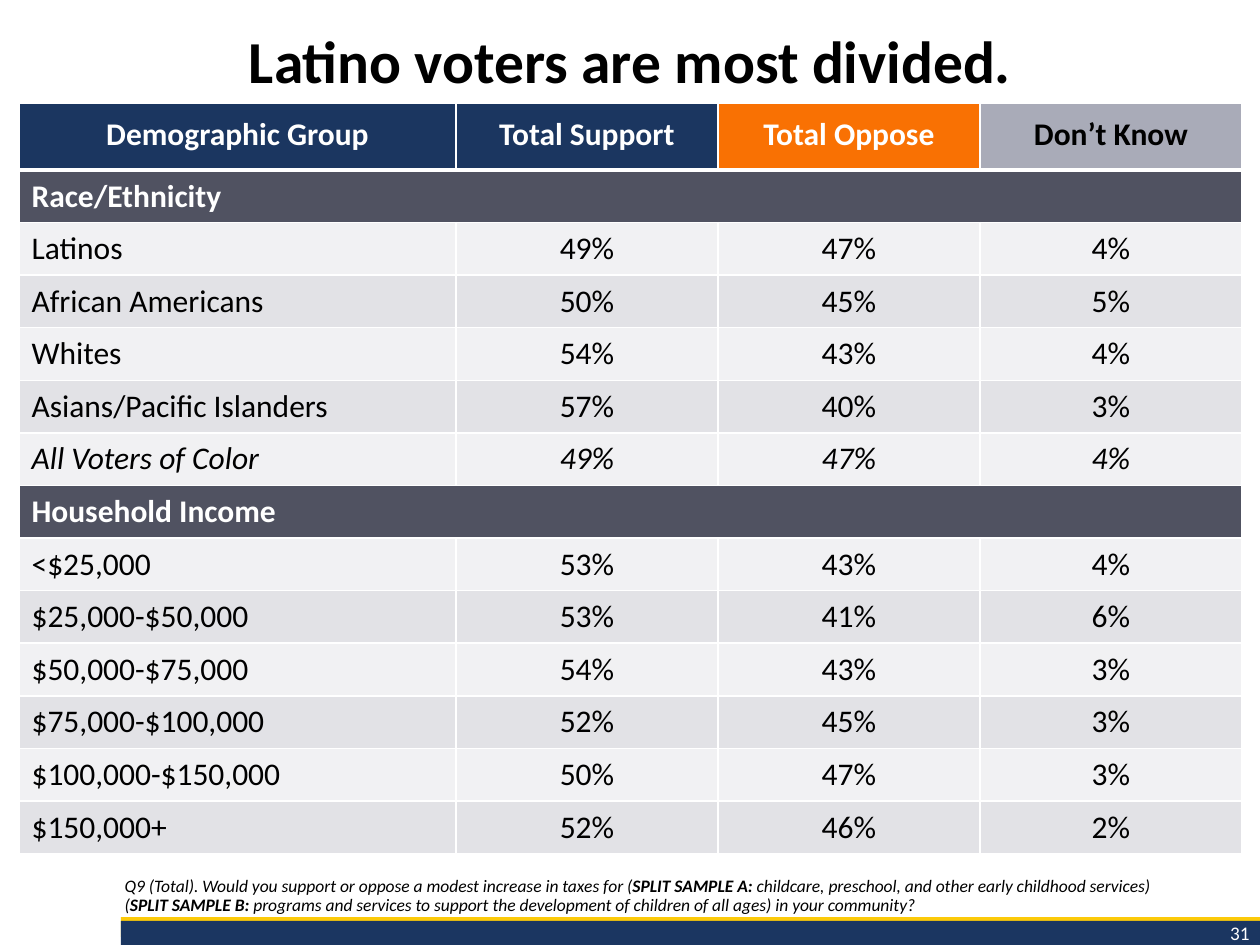
from lxml.etree import SubElement
from pptx import Presentation
from pptx.dml.color import RGBColor
from pptx.enum.shapes import MSO_SHAPE
from pptx.enum.text import MSO_ANCHOR, MSO_AUTO_SIZE, PP_ALIGN
from pptx.oxml.ns import qn
from pptx.util import Emu, Pt

BLACK = RGBColor(0x00, 0x00, 0x00)
WHITE = RGBColor(0xFF, 0xFF, 0xFF)
NAVY = RGBColor(0x1B, 0x36, 0x60)
ORANGE = RGBColor(0xF9, 0x71, 0x03)
GRAY = RGBColor(0xA9, 0xAB, 0xB8)
SLATE = RGBColor(0x50, 0x52, 0x61)
BANDS = [RGBColor(0xF1, 0xF1, 0xF3), RGBColor(0xE2, 0xE2, 0xE6)]
GOLD = RGBColor(0xFC, 0xCA, 0x09)
FOOTER_NAVY = RGBColor(0x1B, 0x36, 0x61)

PX = 914400 / 126  # EMU per pixel


def px(*lengths):
    return [Emu(round(length * PX)) for length in lengths]


def set_borders(cell, widths):
    """Draw white cell borders; a width of 0 hides that side."""
    properties = cell._tc.get_or_add_tcPr()
    for side in "LRTB":
        line = SubElement(properties, qn(f"a:ln{side}"), w=str(Pt(widths[side])))
        if widths[side]:
            fill = SubElement(line, qn("a:solidFill"))
            SubElement(fill, qn("a:srgbClr"), val=str(WHITE))
        else:
            SubElement(line, qn("a:noFill"))


prs = Presentation()
prs.slide_width, prs.slide_height = px(1260, 945)
slide = prs.slides.add_slide(prs.slide_layouts[1])

# Footer bars
for top, height, color in [(917, 20, GOLD), (921, 24, FOOTER_NAVY)]:
    bar = slide.shapes.add_shape(MSO_SHAPE.RECTANGLE, *px(121, top, 1139, height))
    bar.shadow.inherit = False
    bar.fill.solid()
    bar.fill.fore_color.rgb = color
    bar.line.fill.background()

# Page number
page_number = slide.shapes.add_textbox(*px(1076, 915, 186, 36)).text_frame
page_number.word_wrap = True
number = page_number.paragraphs[0]
number.text = "31"
number.alignment = PP_ALIGN.RIGHT
number.font.name = "Calibri"
number.font.size = Pt(11)
number.font.color.rgb = WHITE

# Title
title = slide.shapes.title
title.left, title.top, title.width, title.height = px(0, 26, 1260, 154)
title.text_frame.auto_size = MSO_AUTO_SIZE.NONE
title.text_frame.vertical_anchor = MSO_ANCHOR.TOP
headline = title.text_frame.paragraphs[0]
headline.text = "Latino voters are most divided."
headline.alignment = PP_ALIGN.CENTER
headline.line_spacing = 0.9
headline.font.name = "Calibri"
headline.font.size = Pt(34)
headline.font.bold = True
headline.font.color.rgb = BLACK

# Survey question
question = slide.placeholders[1]
question.left, question.top, question.width, question.height = px(112, 854, 1145, 68)
question.text_frame.auto_size = MSO_AUTO_SIZE.NONE
question.text_frame.vertical_anchor = MSO_ANCHOR.BOTTOM
wording = question.text_frame.paragraphs[0]
wording.line_spacing = 0.9
wording.space_before = Pt(0)
bullet_properties = wording._p.get_or_add_pPr()
bullet_properties.set("marL", "0")
bullet_properties.set("indent", "0")
SubElement(bullet_properties, qn("a:buNone"))
wording.font.name = "Calibri"
wording.font.size = Pt(10)
wording.font.italic = True
wording.font.color.rgb = BLACK
for text, bold in [
    ("Q9 (Total). Would you support or oppose a modest increase in taxes for (", False),
    ("SPLIT SAMPLE A:", True),
    (" childcare, preschool, and other early childhood services) ", False),
    ("\n", False),
    ("(", False),
    ("SPLIT SAMPLE B:", True),
    (" programs and services to support the development of children of all ages)"
     " in your community?", False),
]:
    if text == "\n":
        wording.add_line_break()
        continue
    run = wording.add_run()
    run.text = text
    run.font.bold = bold

# Results table: a row with one entry is a section heading
rows = [
    ("Demographic Group", "Total Support", "Total Oppose", "Don’t Know"),
    ("Race/Ethnicity",),
    ("Latinos", "49%", "47%", "4%"),
    ("African Americans", "50%", "45%", "5%"),
    ("Whites", "54%", "43%", "4%"),
    ("Asians/Pacific Islanders", "57%", "40%", "3%"),
    ("All Voters of Color", "49%", "47%", "4%"),
    ("Household Income",),
    ("<$25,000", "53%", "43%", "4%"),
    ("$25,000-$50,000", "53%", "41%", "6%"),
    ("$50,000-$75,000", "54%", "43%", "3%"),
    ("$75,000-$100,000", "52%", "45%", "3%"),
    ("$100,000-$150,000", "50%", "47%", "3%"),
    ("$150,000+", "52%", "46%", "2%"),
]
header_fills = [NAVY, NAVY, ORANGE, GRAY]
column_widths = px(437, 262, 262, 262)
header_height, body_height = px(67, 684)
last_column = len(column_widths) - 1

results = slide.shapes.add_table(
    len(rows), len(column_widths), *px(19, 103, 1223, 751)).table
for column, width in zip(results.columns, column_widths):
    column.width = width

for r, entries in enumerate(rows):
    is_header = r == 0
    is_section = len(entries) == 1
    results.rows[r].height = (
        header_height if is_header else Emu(body_height // (len(rows) - 1)))
    for c in range(len(column_widths)):
        cell = results.cell(r, c)
        set_borders(cell, {
            "L": 0 if is_section and c > 0 else 1,
            "R": 0 if is_section and c < last_column else 1,
            "T": 3 if r == 1 else 1,
            "B": 3 if is_header else 1,
        })
        cell.fill.solid()
        if is_header:
            cell.fill.fore_color.rgb = header_fills[c]
        else:
            cell.fill.fore_color.rgb = SLATE if is_section else BANDS[r % 2]
            cell.margin_top = cell.margin_bottom = 0
        cell.vertical_anchor = MSO_ANCHOR.MIDDLE

        entry = cell.text_frame.paragraphs[0]
        if c < len(entries):
            entry.text = entries[c]
        if is_header:
            entry.line_spacing = Pt(20)
        entry.alignment = PP_ALIGN.CENTER if is_header or c > 0 else PP_ALIGN.LEFT
        entry.font.name = "Calibri"
        entry.font.size = Pt(18)
        entry.font.bold = is_header or is_section
        entry.font.italic = entries[0] == "All Voters of Color"
        light_text = is_section or (is_header and c < last_column)
        entry.font.color.rgb = WHITE if light_text else BLACK

prs.save("out.pptx")
